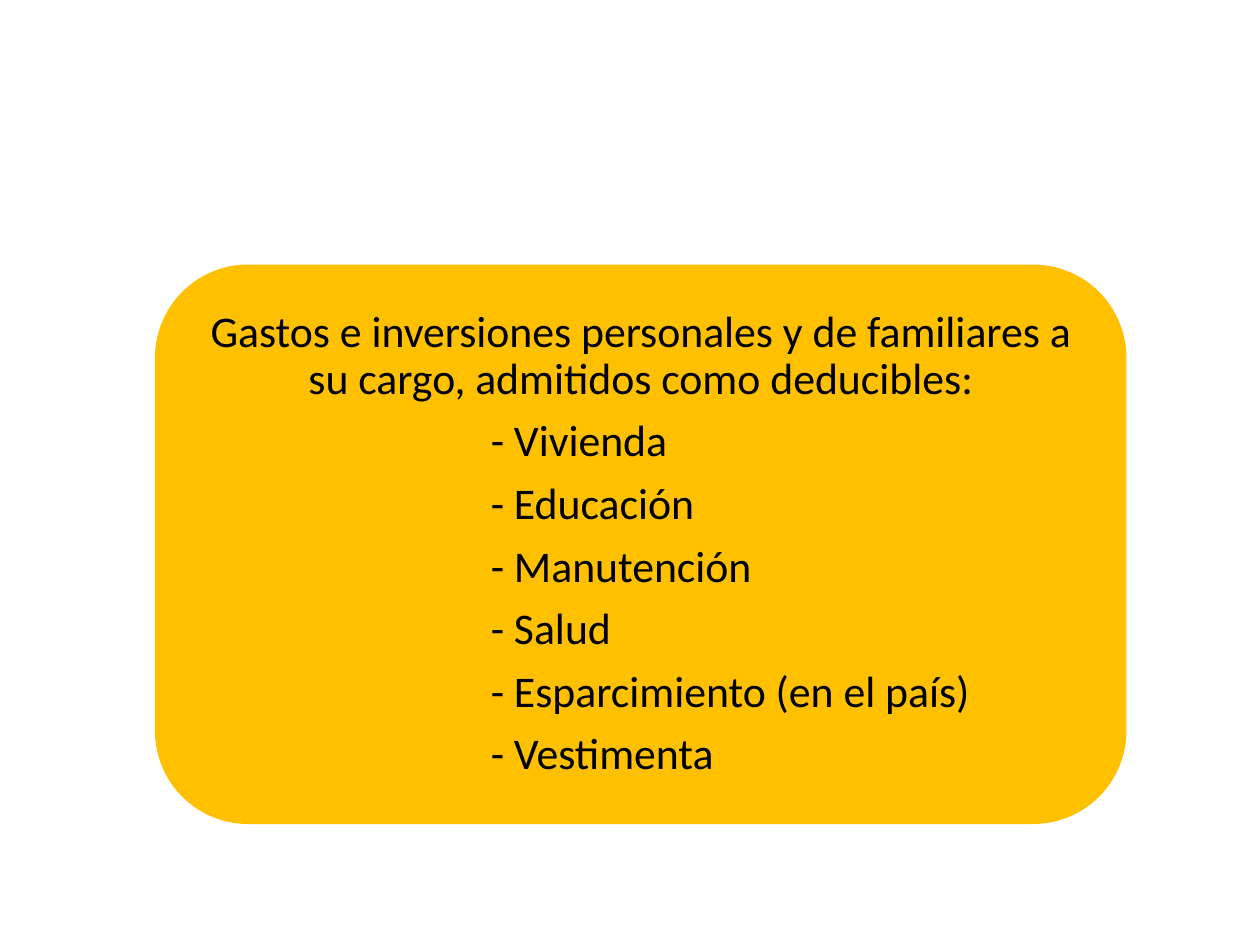
import pptx
import pptx.util
import pptx.dml.color
import pptx.enum.shapes
import pptx.enum.text

Pt = pptx.util.Pt
ALIGN = pptx.enum.text.PP_ALIGN

HEADING = "Gastos e inversiones personales y de familiares a su cargo, admitidos como deducibles:"
EXPENSES = [
    "Vivienda",
    "Educación",
    "Manutención",
    "Salud",
    "Esparcimiento (en el país)",
    "Vestimenta",
]
FONT_SIZE = 25
INSET = 7.2
EXPENSE_INDENT = 169.2


def color(value):
    return pptx.dml.color.RGBColor.from_string(value)


def add_panel(slide):
    panel = slide.shapes.add_shape(
        pptx.enum.shapes.MSO_SHAPE.ROUNDED_RECTANGLE,
        Pt(88.56), Pt(151.2), Pt(555.12), Pt(319.68),
    )
    panel.shadow.inherit = False
    panel.fill.solid()
    panel.fill.fore_color.rgb = color("FFC000")
    panel.line.fill.background()
    frame = panel.text_frame
    frame.word_wrap = True
    frame.vertical_anchor = pptx.enum.text.MSO_ANCHOR.MIDDLE
    frame.margin_left = frame.margin_right = Pt(INSET)
    frame.margin_top = frame.margin_bottom = Pt(INSET)
    return frame


def format_paragraph(paragraph, alignment):
    paragraph.alignment = alignment
    paragraph.line_spacing = 0.9
    paragraph.space_after = Pt(FONT_SIZE * 0.35)
    for run in paragraph.runs:
        run.font.name = "Calibri"
        run.font.size = Pt(FONT_SIZE)
        run.font.color.rgb = color("000000")


def main():
    presentation = pptx.Presentation()
    presentation.slide_width = Pt(720)
    presentation.slide_height = Pt(540)
    slide = presentation.slides.add_slide(presentation.slide_layouts[6])
    frame = add_panel(slide)
    frame.text = "\n".join([HEADING] + [f"- {expense}" for expense in EXPENSES])
    heading, *expenses = frame.paragraphs
    format_paragraph(heading, ALIGN.CENTER)
    for paragraph in expenses:
        format_paragraph(paragraph, ALIGN.JUSTIFY)
        properties = paragraph._p.get_or_add_pPr()
        properties.set("marL", "0")
        properties.set("indent", str(int(Pt(EXPENSE_INDENT))))
    presentation.save("out.pptx")


if __name__ == "__main__":
    main()
